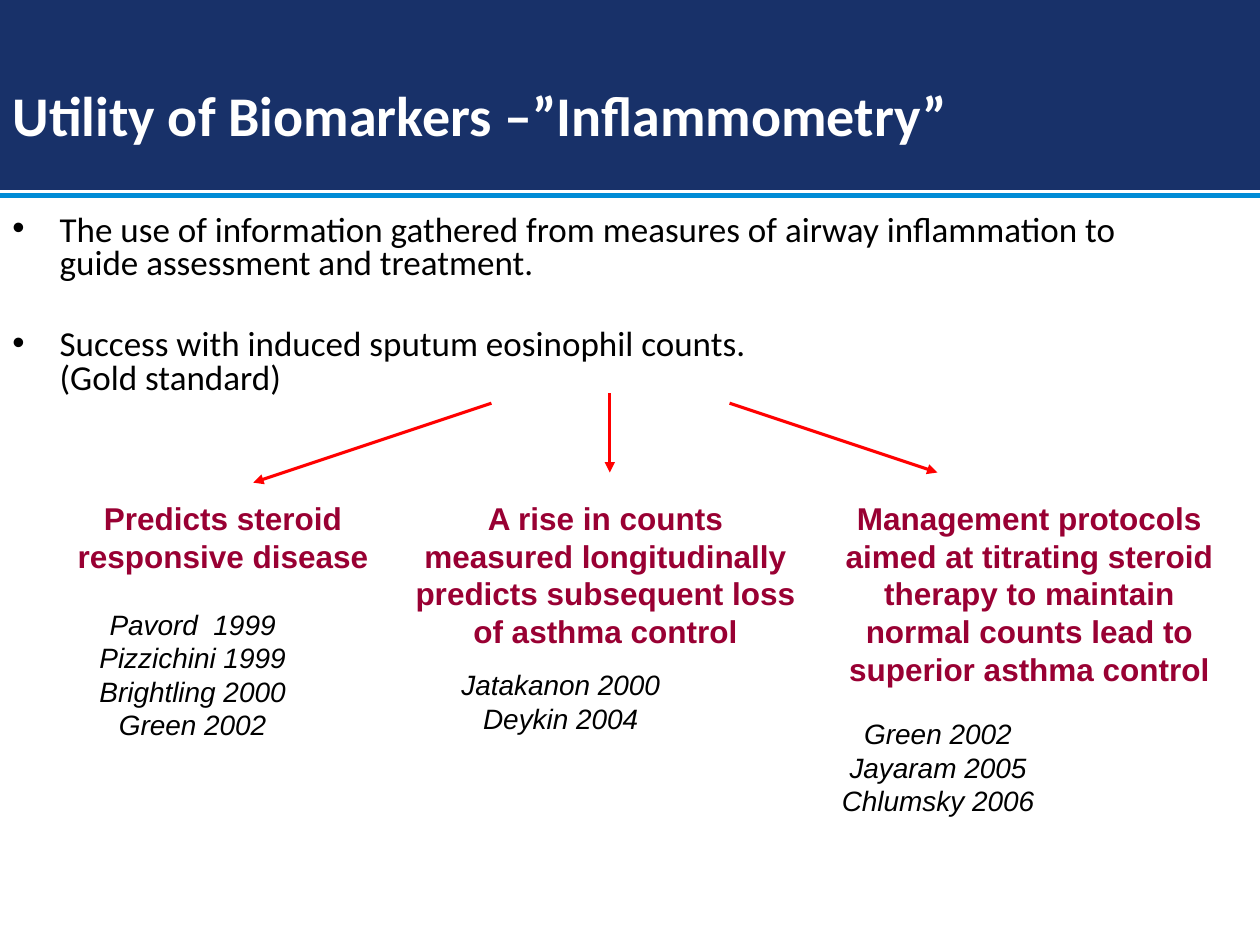
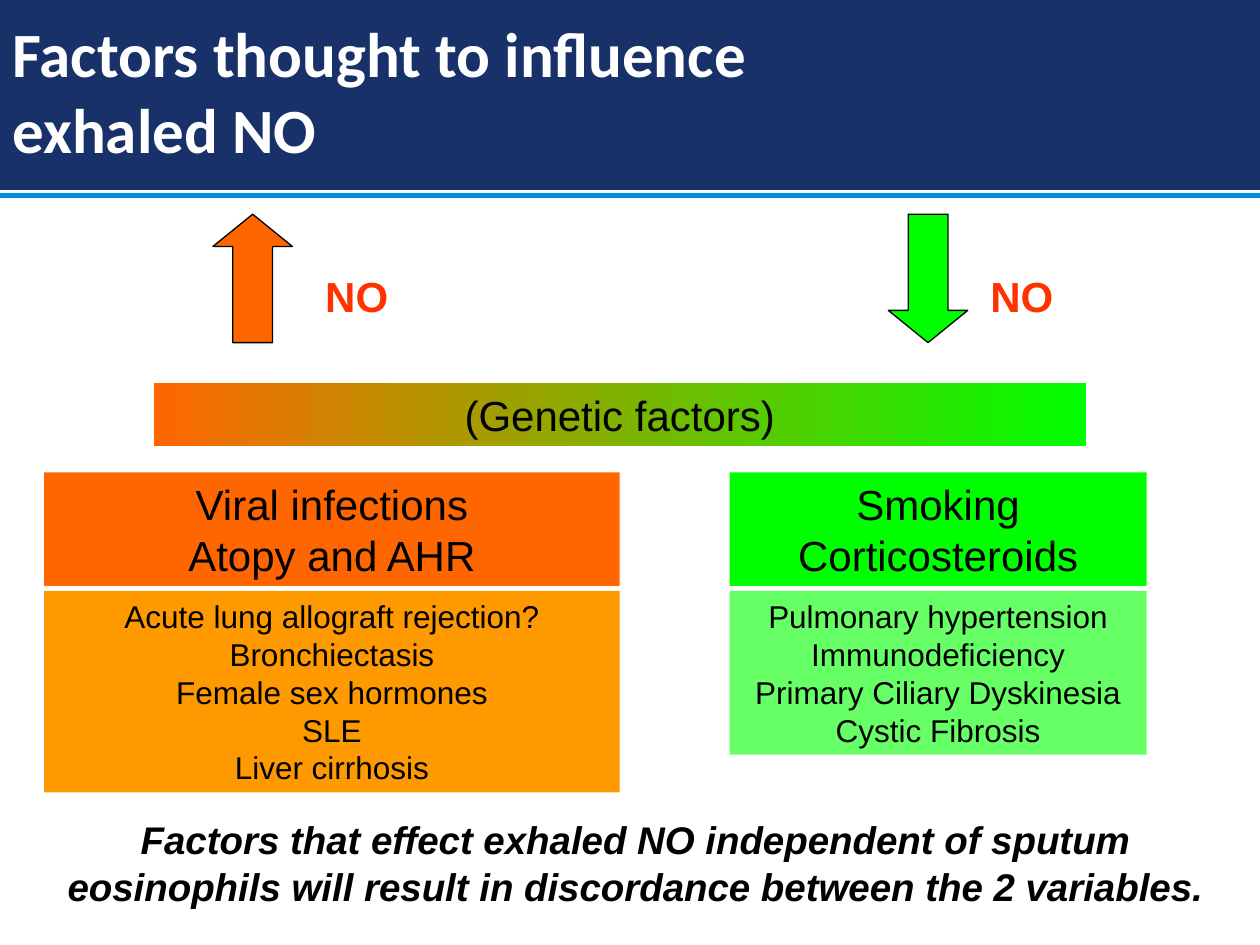
from lxml import etree
from pptx import Presentation
from pptx.dml.color import RGBColor
from pptx.enum import shapes, text
from pptx.oxml import ns
from pptx.util import Pt

NAVY = RGBColor(0x18, 0x31, 0x69)
SKY = RGBColor(0x00, 0x8C, 0xD6)
WHITE = RGBColor(0xFF, 0xFF, 0xFF)
BLACK = RGBColor(0, 0, 0)
RED = RGBColor(0xFF, 0, 0)
CRIMSON = RGBColor(0x99, 0x00, 0x33)
SCARLET = RGBColor(0xFF, 0x33, 0x00)
ORANGE = RGBColor(0xFF, 0x66, 0x00)
AMBER = RGBColor(0xFF, 0x99, 0x00)
GREEN = RGBColor(0x00, 0xFF, 0x00)
LIGHT_GREEN = RGBColor(0x66, 0xFF, 0x66)
CENTER, LEFT = text.PP_ALIGN.CENTER, text.PP_ALIGN.LEFT


def add_xml(parent, tag, **attributes):
    return etree.SubElement(parent, ns.qn(tag), **attributes)


class Deck:
    """Holds the style and the slide being drawn."""
    heading_font = "Calibri"
    body_font = "Arial"

    def __init__(self):
        self.presentation = Presentation()
        self.presentation.slide_width = Pt(720)
        self.presentation.slide_height = Pt(540)
        self.slide = self.shapes = None

    def new_slide(self, title, left, top, width, height, size):
        layout = self.presentation.slide_layouts[5]
        first = self.slide is None
        self.slide = self.presentation.slides.add_slide(layout)
        self.shapes = self.slide.shapes
        if first:
            self.master_band()
        shape = self.shapes.title
        shape.left, shape.top, shape.width, shape.height = map(Pt, (left, top, width, height))
        frame = shape.text_frame
        frame.auto_size = text.MSO_AUTO_SIZE.NONE
        frame.vertical_anchor = text.MSO_ANCHOR.MIDDLE
        self.add_text(frame.paragraphs[0], title, size, WHITE, bold=True,
                      align=LEFT, font=self.heading_font)

    def master_band(self):
        """Place the title band and its rule on the master, behind everything."""
        rule = self.line(0, 111.6, 720, 111.6, SKY, 3)
        band = self.box(0, 0, 720, 107.3, NAVY)
        band.line.color.rgb, band.line.width = NAVY, Pt(3)
        tree = self.slide.slide_layout.slide_master.shapes.element
        for index, shape in enumerate((rule, band)):
            shape.element.xpath(".//p:cNvPr")[0].set("id", str(101 + index))
            tree.insert(2 + index, shape.element)

    def group(self):
        """Let the next elements go into a new group."""
        self.shapes = self.slide.shapes.add_group_shape().shapes

    def add_text(self, paragraph, words, size, color=BLACK, bold=False,
                 italic=False, align=CENTER, font=None):
        paragraph.alignment = align
        for index, line in enumerate(words.split("\n")):
            if index:
                paragraph.add_line_break()
            run = paragraph.add_run()
            run.text = line
            run.font.name = font or self.body_font
            run.font.size = Pt(size)
            run.font.bold, run.font.italic = bold, italic
            run.font.color.rgb = color

    def fit(self, shape):
        frame = shape.text_frame
        frame.word_wrap = True
        frame.auto_size = text.MSO_AUTO_SIZE.SHAPE_TO_FIT_TEXT
        frame.vertical_anchor = text.MSO_ANCHOR.TOP
        return frame.paragraphs[0]

    def label(self, left, top, width, height, words, size, color=BLACK, **style):
        shape = self.shapes.add_textbox(Pt(left), Pt(top), Pt(width), Pt(height))
        self.add_text(self.fit(shape), words, size, color, **style)

    def bullets(self, left, top, width, height, items, size, gap):
        frame = self.shapes.add_textbox(Pt(left), Pt(top), Pt(width), Pt(height)).text_frame
        frame.word_wrap = True
        for index, item in enumerate(items):
            paragraph = frame.add_paragraph() if index else frame.paragraphs[0]
            paragraph.line_spacing = 0.8
            paragraph.space_before = Pt(gap if index else 0)
            properties = paragraph._p.get_or_add_pPr()
            properties.set("marL", str(Pt(27)))
            properties.set("indent", str(Pt(-27)))
            add_xml(properties, "a:buFont", typeface=self.body_font)
            add_xml(properties, "a:buChar", char="•")
            self.add_text(paragraph, item, size, align=LEFT, font=self.heading_font)

    def box(self, left, top, width, height, fill, words="", size=18,
            kind=shapes.MSO_SHAPE.RECTANGLE):
        shape = self.shapes.add_shape(kind, Pt(left), Pt(top), Pt(width), Pt(height))
        shape.shadow.inherit = False
        shape.line.fill.background()
        if isinstance(fill, RGBColor):
            shape.fill.solid()
            shape.fill.fore_color.rgb = fill
        else:
            shape.fill.gradient()
            shape.fill.gradient_angle = 0
            for position, (stop, color) in enumerate(zip(shape.fill.gradient_stops, fill)):
                stop.color.rgb, stop.position = color, position
        if words:
            self.add_text(self.fit(shape), words, size)
        return shape

    def block_arrow(self, left, top, fill, rotation):
        shape = self.box(left, top, 45.4, 73.4, fill, kind=shapes.MSO_SHAPE.UP_ARROW)
        shape.adjustments[0], shape.adjustments[1] = 0.5, 0.406
        shape.rotation = rotation
        shape.line.color.rgb, shape.line.width = BLACK, Pt(0.75)

    def line(self, x1, y1, x2, y2, color, width, arrow=False):
        connector = self.shapes.add_connector(
            shapes.MSO_CONNECTOR.STRAIGHT, Pt(x1), Pt(y1), Pt(x2), Pt(y2))
        connector.line.color.rgb, connector.line.width = color, Pt(width)
        if arrow:
            add_xml(connector.line._get_or_add_ln(), "a:tailEnd", type="triangle")
        add_xml(connector.element.spPr, "a:effectLst")
        return connector


def inflammometry_slide(deck):
    deck.new_slide("Utility of Biomarkers –”Inflammometry”", 0, 36, 648, 58.3, 32)
    deck.bullets(0, 119.5, 648, 147.6, [
        "The use of information gathered from measures of airway inflammation to "
        "guide assessment and treatment.",
        "Success with induced sputum eosinophil counts.\n(Gold standard)"], 20, 27)

    # Findings: left, width, height, finding; studies top, width, height, names; arrow
    findings = [
        (36.7, 181.4, 50.4, "Predicts steroid responsive disease",
         343.4, 158.4, 84.2, "Pavord  1999\nPizzichini 1999\nBrightling 2000\nGreen 2002",
         (280.8, 230.4, 144.7, 275.8)),
        (229.7, 232.6, 93.6, "A rise in counts measured longitudinally predicts "
         "subsequent loss of asthma control",
         378, 193, 46.1, "Jatakanon 2000\nDeykin 2004",
         (348.5, 224.6, 348.5, 270)),
        (468, 240.5, 115.2, "Management protocols aimed at titrating steroid therapy "
         "to maintain normal counts lead to superior asthma control",
         406.1, 147.6, 64.8, "Green 2002 Jayaram 2005\nChlumsky 2006",
         (416.9, 230.4, 535.7, 270)),
    ]
    for (left, width, height, finding, studies_top, studies_width,
         studies_height, studies, arrow) in findings:
        deck.group()
        deck.label(left, 281.5, width, height, finding, 18, CRIMSON, bold=True)
        deck.label(left - 5.8, studies_top, studies_width, studies_height,
                   studies, 16, italic=True)
        deck.line(*arrow, RED, 1.75, arrow=True)


def exhaled_no_slide(deck):
    deck.new_slide("Factors thought to influence \nexhaled NO", 0, 20.2, 538.6, 62.6, 36)

    # Direction of change
    for arrow_left, label_left, fill, rotation in (
            (121.7, 161.3, ORANGE, 0), (507.6, 541.4, GREEN, 180)):
        deck.block_arrow(arrow_left, 122.4, fill, rotation)
        deck.label(label_left, 151.2, 85, 36, "NO", 24, SCARLET, bold=True)

    # Factors: shared bar, then main and further factors on each side
    deck.box(87.8, 218.9, 532.8, 36, (ORANGE, GREEN), "(Genetic factors)", 24)
    sides = [
        (25.2, 329, ORANGE, "Viral infections\nAtopy and AHR", AMBER, 115.2,
         "Acute lung allograft rejection? Bronchiectasis\nFemale sex hormones\n"
         "SLE\nLiver cirrhosis"),
        (416.9, 238.3, GREEN, "Smoking\nCorticosteroids", LIGHT_GREEN, 93.6,
         "Pulmonary hypertension\nImmunodeficiency\nPrimary Ciliary Dyskinesia\n"
         "Cystic Fibrosis"),
    ]
    for left, width, main_fill, main_factors, further_fill, further_height, further in sides:
        deck.box(left, 270, width, 64.8, main_fill, main_factors, 24)
        deck.box(left, 337.7, width, further_height, further_fill, further, 18)

    # Conclusion
    deck.label(14.4, 463, 697.7, 59.8,
               "Factors that effect exhaled NO independent of sputum eosinophils "
               "will result in discordance between the 2 variables.",
               22, bold=True, italic=True)


def main():
    deck = Deck()
    inflammometry_slide(deck)
    exhaled_no_slide(deck)
    deck.presentation.save("out.pptx")


if __name__ == "__main__":
    main()
